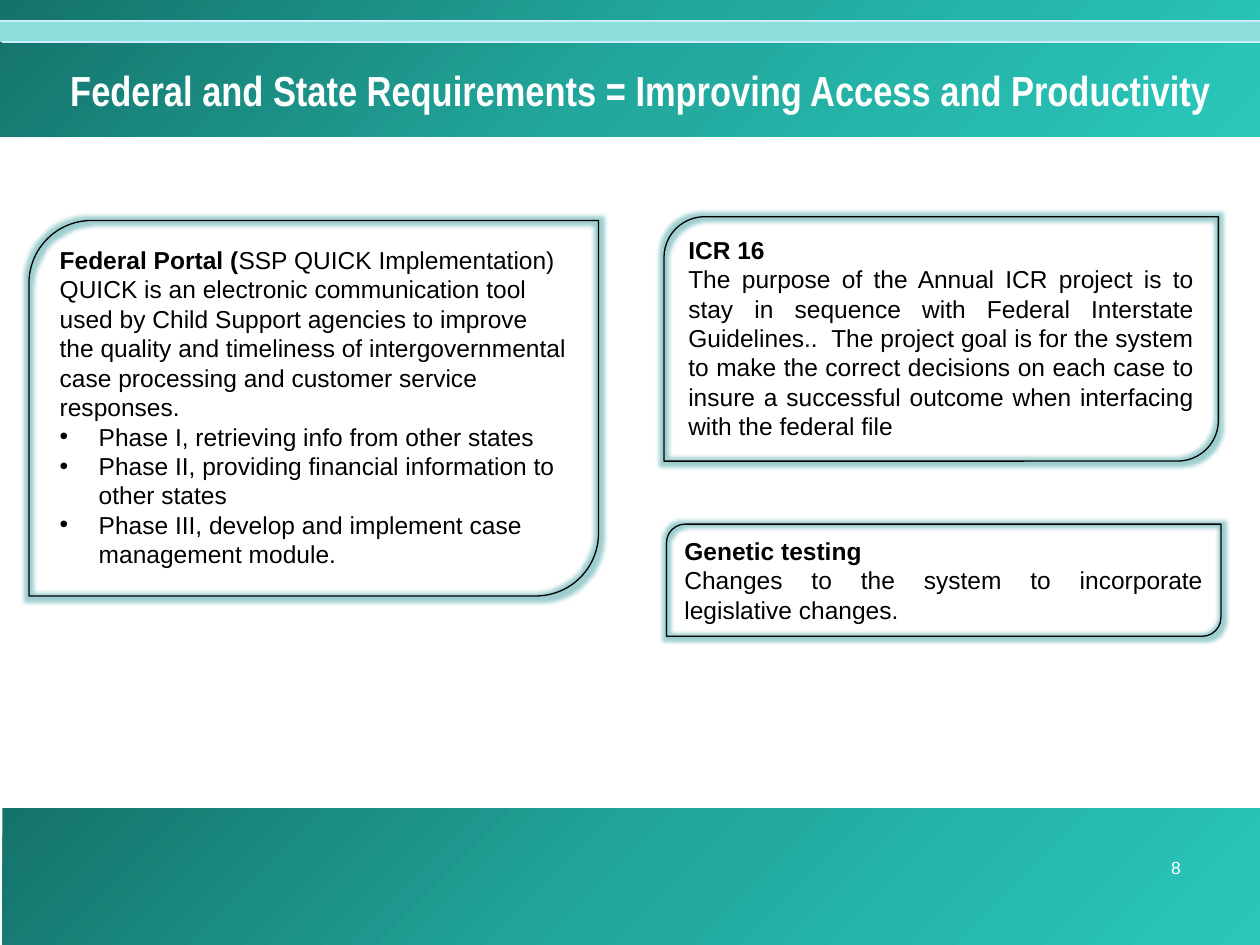
from lxml import etree
from pptx import Presentation
from pptx.dml.color import RGBColor
from pptx.enum.shapes import MSO_CONNECTOR, MSO_SHAPE
from pptx.enum.text import MSO_ANCHOR, PP_ALIGN
from pptx.oxml import parse_xml
from pptx.oxml.ns import nsdecls, qn
from pptx.util import Inches, Pt

RECT = MSO_SHAPE.RECTANGLE
CARD = MSO_SHAPE.ROUND_2_DIAG_RECTANGLE
STRAIGHT = MSO_CONNECTOR.STRAIGHT
TOP, MIDDLE = MSO_ANCHOR.TOP, MSO_ANCHOR.MIDDLE
LEFT, CENTER, JUSTIFY = PP_ALIGN.LEFT, PP_ALIGN.CENTER, PP_ALIGN.JUSTIFY

WIDTH, HEIGHT = Inches(10), Inches(7.5)
COLS, ROWS = 120, 90
BLACK, WHITE = "000000", "FFFFFF"
STRIPE, RULE, GLOW = "8DDFD9", "CCECFF", "0B8489"
GRADIENT = [(0, "14736B"), (50, "22A79C"), (100, "2BC7BB")]

FEDERAL = [
    [("Federal Portal (", True), ("SSP QUICK Implementation)", False)],
    [("QUICK is an electronic communication tool used by Child Support "
      "agencies to improve the quality and timeliness of intergovernmental "
      "case processing and customer service responses.", False)],
]
PHASES = [
    [("Phase I, retrieving info from other states", False)],
    [("Phase II, providing financial information to other states", False)],
    [("Phase III, develop and implement case management module.", False)],
]
ICR = [
    [("ICR 16", True)],
    [("The purpose of the Annual ICR project is to stay in sequence with "
      "Federal Interstate Guidelines..  The project goal is for the system "
      "to make the correct decisions on each case to insure a successful "
      "outcome when interfacing with the federal file", False)],
]
GENETIC = [
    [("Genetic testing", True)],
    [("Changes to the system to incorporate legislative changes.", False)],
]


def rgb(color):
    return RGBColor.from_string(color)


def x(col):
    return round(WIDTH * col / COLS)


def y(row):
    return round(HEIGHT * row / ROWS)


def place(col, row, cols, rows):
    return x(col), y(row), x(cols), y(rows)


def add_band(s, box, color=None):
    sp = s.shapes.add_shape(RECT, *place(*box))
    sp.shadow.inherit = False
    sp.line.fill.background()
    if color:
        sp.fill.solid()
        sp.fill.fore_color.rgb = rgb(color)
        return
    stops = "".join(
        f'<a:gs pos="{pos * 1000}"><a:srgbClr val="{c}"/></a:gs>'
        for pos, c in GRADIENT)
    grad = parse_xml(
        f'<a:gradFill {nsdecls("a")} rotWithShape="1"><a:gsLst>{stops}</a:gsLst>'
        '<a:lin ang="2700000" scaled="0"/></a:gradFill>')
    sp.element.spPr.find(qn("a:prstGeom")).addnext(grad)


def add_rule(s, start, row):
    line = s.shapes.add_connector(STRAIGHT, x(start), y(row), x(COLS), y(row))
    line.line.color.rgb = rgb(RULE)
    line.line.width = Pt(1.5)
    etree.SubElement(line.element.spPr, qn("a:effectLst"))


def add_bullet(p):
    pPr = p._p.get_or_add_pPr()
    pPr.set("marL", str(Inches(0.31)))
    pPr.set("indent", str(-Inches(0.31)))
    etree.SubElement(pPr, qn("a:buFont"), typeface="Arial")
    etree.SubElement(pPr, qn("a:buChar"), char="•")


def add_paragraph(tf, runs, first, align, size, color, font="Arial"):
    p = tf.paragraphs[0] if first else tf.add_paragraph()
    p.alignment = align
    for text, bold in runs:
        r = p.add_run()
        r.text = text
        r.font.name = font
        r.font.size = Pt(size)
        r.font.bold = bold
        r.font.color.rgb = rgb(color)
    return p


def add_label(s, box, text, size, bold, font, anchor):
    tf = s.shapes.add_textbox(*place(*box)).text_frame
    tf.word_wrap = True
    tf.vertical_anchor = anchor
    add_paragraph(tf, [(text, bold)], True, CENTER, size, WHITE, font)


def add_card(s, box, paragraphs, align, bullets=()):
    sp = s.shapes.add_shape(CARD, *place(*box))
    sp.fill.background()
    sp.line.color.rgb = rgb(BLACK)
    sp.line.width = Pt(0.75)
    sp.shadow.inherit = False
    effects = sp.element.spPr.find(qn("a:effectLst"))
    effects.append(parse_xml(
        f'<a:glow {nsdecls("a")} rad="63500"><a:srgbClr val="{GLOW}">'
        '<a:alpha val="40000"/></a:srgbClr></a:glow>'))
    tf = sp.text_frame
    tf.word_wrap = True
    tf.vertical_anchor = TOP
    for i, runs in enumerate(paragraphs):
        add_paragraph(tf, runs, i == 0, align, 14, BLACK)
    for runs in bullets:
        add_bullet(add_paragraph(tf, runs, False, align, 14, BLACK))


def main():
    prs = Presentation()
    prs.slide_width, prs.slide_height = WIDTH, HEIGHT
    s = prs.slides.add_slide(prs.slide_layouts[6])

    add_band(s, (0.24, 77, COLS, 13))
    add_band(s, (0, 0, COLS, 13))
    add_band(s, (0, 2, COLS, 2), STRIPE)
    add_rule(s, 0, 2)
    add_rule(s, 0.24, 4)

    add_label(s, (4, 1, 114, 15),
              "Federal and State Requirements = Improving Access and Productivity",
              24, True, "Arial Narrow", MIDDLE)
    add_label(s, (108, 81, 8, 5), "8", 10, False, "Arial", TOP)

    add_card(s, (2.76, 21, 54.24, 35.76), FEDERAL, LEFT, PHASES)
    add_card(s, (63.24, 20.64, 52.8, 23.28), ICR, JUSTIFY)
    add_card(s, (63.48, 49.92, 52.8, 10.68), GENETIC, JUSTIFY)

    prs.save("out.pptx")


if __name__ == "__main__":
    main()
